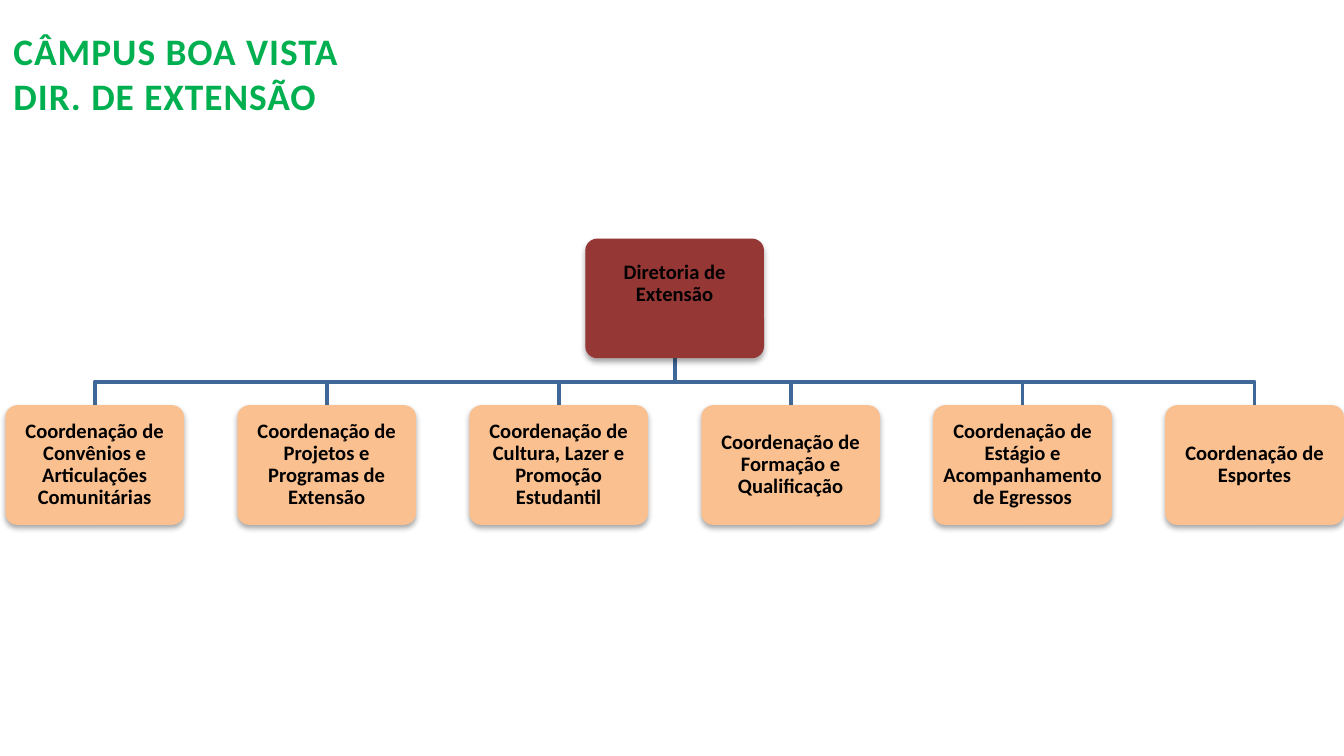
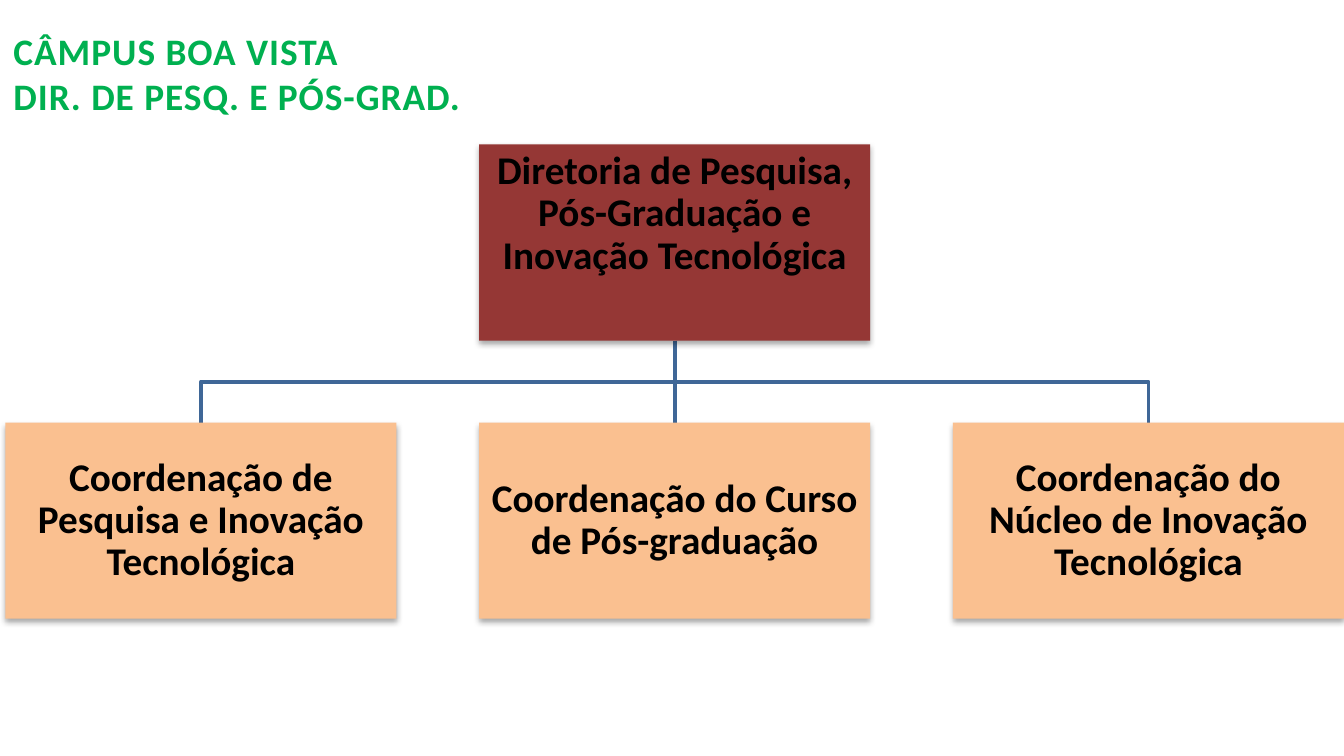
from lxml import etree
from pptx import Presentation
from pptx.dml.color import RGBColor
from pptx.enum.shapes import MSO_CONNECTOR, MSO_SHAPE
from pptx.enum.text import MSO_ANCHOR, MSO_AUTO_SIZE, PP_ALIGN
from pptx.oxml.ns import qn
from pptx.util import Inches, Pt

ROUNDED, RECTANGLE = MSO_SHAPE.ROUNDED_RECTANGLE, MSO_SHAPE.RECTANGLE
STRAIGHT = MSO_CONNECTOR.STRAIGHT
LEFT, CENTER = PP_ALIGN.LEFT, PP_ALIGN.CENTER
TOP, MIDDLE = MSO_ANCHOR.TOP, MSO_ANCHOR.MIDDLE
FIT_SHAPE = MSO_AUTO_SIZE.SHAPE_TO_FIT_TEXT

WIDTH = 10
HEIGHT = WIDTH * 9 / 16
CHART_LEFT = 0.04
BRANCH_LEVEL = 2.84
FONT = "Calibri"
GREEN, RED, PEACH, BLUE, BLACK = "00B050", "953735", "FAC090", "3F6797", "000000"
CAMPUS = "CÂMPUS BOA VISTA"
TITLE_ONLY = 5

CHARTS = [
    {
        "department": "DIR. DE EXTENSÃO",
        "head": "Diretoria de Extensão",
        "units": [
            "Coordenação de Convênios e Articulações Comunitárias",
            "Coordenação de Projetos e Programas de Extensão",
            "Coordenação de Cultura, Lazer e Promoção Estudantil",
            "Coordenação de Formação e Qualificação",
            "Coordenação de Estágio e Acompanhamento de Egressos",
            "Coordenação de Esportes",
        ],
        "style": {"kind": ROUNDED, "width": 1.33, "height": 0.89, "size": 11, "inset": 0.04},
        "level_gap": 0.35,
    },
    {
        "department": "DIR. DE PESQ. E PÓS-GRAD.",
        "head": "Diretoria de Pesquisa, Pós-Graduação e Inovação Tecnológica",
        "units": [
            "Coordenação de Pesquisa e Inovação Tecnológica",
            "Coordenação do Curso de Pós-graduação",
            "Coordenação do Núcleo de Inovação Tecnológica",
        ],
        "style": {"kind": RECTANGLE, "width": 2.91, "height": 1.46, "size": 21, "inset": 0.02},
        "level_gap": 0.61,
    },
]


def color(value):
    return RGBColor.from_string(value)


def write(frame, text, *, size, fill=BLACK, align=CENTER, anchor=MIDDLE, spacing=0.9, tracking=0):
    frame.word_wrap = True
    frame.vertical_anchor = anchor
    frame.text = text
    for paragraph in frame.paragraphs:
        paragraph.alignment = align
        paragraph.line_spacing = spacing
        for run in paragraph.runs:
            run.font.name = FONT
            run.font.size = Pt(size)
            run.font.bold = True
            run.font.color.rgb = color(fill)
            if tracking:
                run.font._element.set("spc", str(int(tracking * 100)))


def add_shadow(shape):
    shape.shadow.inherit = False
    effects = shape._element.spPr.find(qn("a:effectLst"))
    shadow = etree.SubElement(effects, qn("a:outerShdw"), blurRad=str(Pt(3.1)),
                              dist=str(Pt(1.8)), dir="5400000", rotWithShape="0")
    tone = etree.SubElement(shadow, qn("a:srgbClr"), val=BLACK)
    etree.SubElement(tone, qn("a:alpha"), val="35000")


def add_title(slide, department):
    title = slide.shapes.title
    title.left, title.top = 0, Inches(0.16)
    title.width, title.height = Inches(3.89), Inches(0.77)
    write(title.text_frame, f"{CAMPUS}\n{department}", size=20, fill=GREEN,
          align=LEFT, anchor=TOP, spacing=1.0, tracking=0.5)
    title.text_frame.auto_size = FIT_SHAPE


def add_box(slide, text, center, top, fill, *, kind, width, height, size, inset, lift=0):
    box = slide.shapes.add_shape(kind, Inches(center - width / 2), Inches(top),
                                 Inches(width), Inches(height))
    if kind == ROUNDED:
        box.adjustments[0] = 0.1
    box.fill.solid()
    box.fill.fore_color.rgb = color(fill)
    box.line.fill.background()
    add_shadow(box)
    frame = box.text_frame
    frame.margin_left = frame.margin_right = frame.margin_top = Inches(inset)
    frame.margin_bottom = Inches(inset) + Pt(lift)
    write(frame, text, size=size)


def add_branch(slide, start, end):
    points = [(Inches(x), Inches(y)) for x, y in
              (start, (start[0], BRANCH_LEVEL), (end[0], BRANCH_LEVEL), end)]
    if abs(start[0] - end[0]) < 0.01:
        branch = slide.shapes.add_connector(STRAIGHT, *points[0], *points[-1])
        etree.SubElement(branch._element.spPr, qn("a:effectLst"))
    else:
        builder = slide.shapes.build_freeform(*points[0], scale=1.0)
        builder.add_line_segments(points[1:], close=False)
        branch = builder.convert_to_shape()
        branch.fill.background()
        branch.shadow.inherit = False
    branch.line.color.rgb = color(BLUE)
    branch.line.width = Pt(2)


def add_organization(slide, head, units, style, level_gap):
    width, height = style["width"], style["height"]
    pitch = (WIDTH - CHART_LEFT - width) / (len(units) - 1)
    centers = [CHART_LEFT + width / 2 + column * pitch for column in range(len(units))]
    middle = (CHART_LEFT + WIDTH) / 2
    head_bottom = BRANCH_LEVEL - level_gap / 2
    units_top = BRANCH_LEVEL + level_gap / 2
    for center in centers:
        add_branch(slide, (middle, head_bottom), (center, units_top))
    add_box(slide, head, middle, head_bottom - height, RED, lift=style["size"] * 1.45, **style)
    for unit, center in zip(units, centers):
        add_box(slide, unit, center, units_top, PEACH, **style)


def main():
    presentation = Presentation()
    presentation.slide_width, presentation.slide_height = Inches(WIDTH), Inches(HEIGHT)
    for chart in CHARTS:
        slide = presentation.slides.add_slide(presentation.slide_layouts[TITLE_ONLY])
        add_title(slide, chart["department"])
        add_organization(slide, chart["head"], chart["units"], chart["style"], chart["level_gap"])
    presentation.save("out.pptx")


if __name__ == "__main__":
    main()
